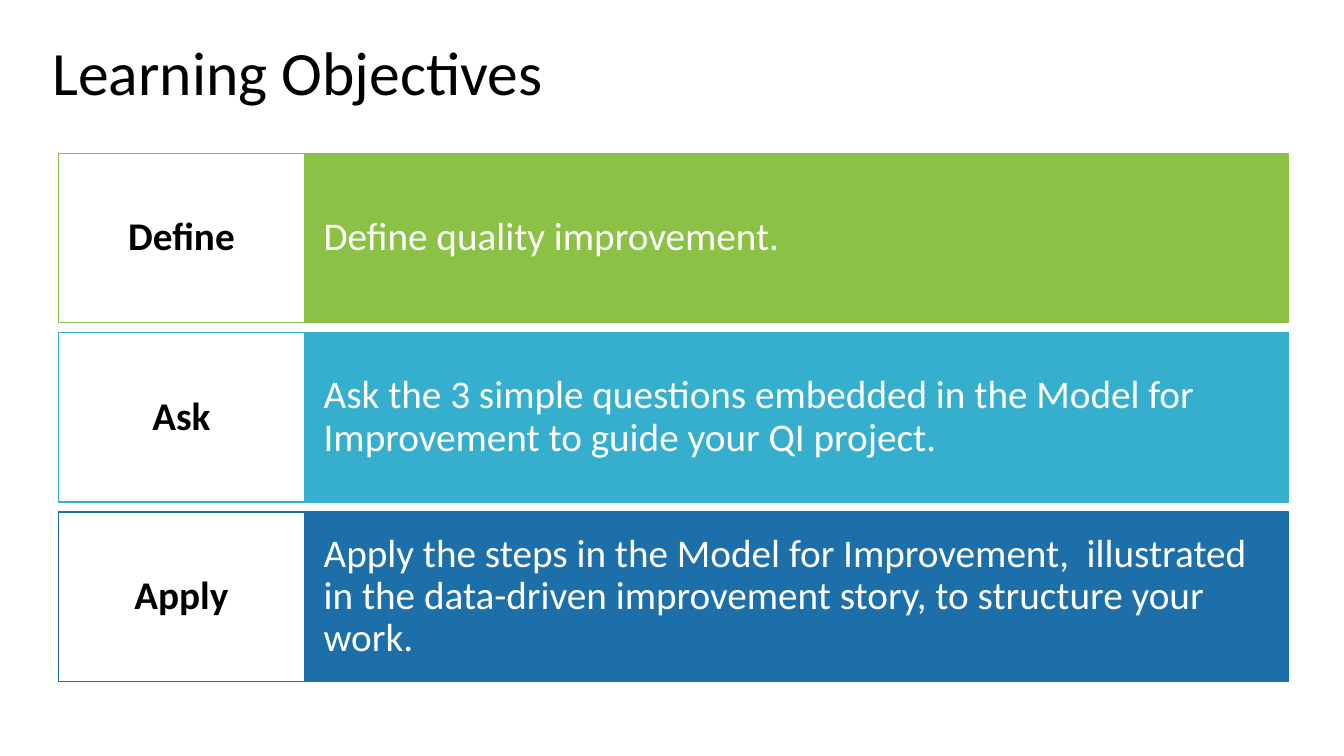
from pptx import Presentation
from pptx.dml.color import RGBColor
from pptx.enum.shapes import MSO_SHAPE
from pptx.enum.text import MSO_ANCHOR, MSO_AUTO_SIZE, PP_ALIGN
from pptx.util import Inches, Pt

RECTANGLE = MSO_SHAPE.RECTANGLE
MIDDLE = MSO_ANCHOR.MIDDLE
NO_AUTOFIT = MSO_AUTO_SIZE.NONE
LEFT, CENTER = PP_ALIGN.LEFT, PP_ALIGN.CENTER

FONT = "Calibri"
BLACK, WHITE = "000000", "FFFFFF"

# Grid of objectives, in inches
GRID_LEFT, GRID_TOP, GRID_WIDTH = 0.58, 1.52, 12.2
LABEL_WIDTH = GRID_WIDTH / 5
ROW_HEIGHT, ROW_PITCH = 1.68, 1.78

OBJECTIVES = [
    ("Define", "Define quality improvement.", "8BC145"),
    ("Ask", "Ask the 3 simple questions embedded in the Model for "
     "Improvement to guide your QI project.", "36AFCE"),
    ("Apply", "Apply the steps in the Model for Improvement,  illustrated in "
     "the data-driven improvement story, to structure your work.", "1D6FA9"),
]


def color(hex_string):
    return RGBColor.from_string(hex_string)


def write_text(shape, text, size, hex_color, bold=False, align=LEFT):
    frame = shape.text_frame
    frame.word_wrap = True
    frame.auto_size = NO_AUTOFIT
    frame.vertical_anchor = MIDDLE
    paragraph = frame.paragraphs[0]
    paragraph.alignment = align
    paragraph.line_spacing = 0.9
    paragraph.space_before = Pt(0)
    run = paragraph.add_run()
    run.text = text
    run.font.name = FONT
    run.font.size = Pt(size)
    run.font.bold = bold
    run.font.color.rgb = color(hex_color)


def place_title(slide, text):
    title = slide.shapes.title
    title.left, title.top = Inches(0.42), Inches(0.02)
    title.width, title.height = Inches(8.62), Inches(1.45)
    write_text(title, text, 44, BLACK)


def add_cell(slide, left, top, width, fill, line, margins):
    cell = slide.shapes.add_shape(RECTANGLE, Inches(left), Inches(top),
                                  Inches(width), Inches(ROW_HEIGHT))
    cell.shadow.inherit = False
    cell.fill.solid()
    cell.fill.fore_color.rgb = color(fill)
    cell.line.color.rgb = color(line)
    cell.line.width = Pt(1)
    frame = cell.text_frame
    horizontal, vertical = margins
    frame.margin_left = frame.margin_right = Inches(horizontal)
    frame.margin_top = frame.margin_bottom = Inches(vertical)
    return cell


def add_objective(slide, row, label, description, accent):
    top = GRID_TOP + row * ROW_PITCH
    description_cell = add_cell(slide, GRID_LEFT + LABEL_WIDTH, top,
                                GRID_WIDTH - LABEL_WIDTH, accent, accent,
                                (0.19, 0.43))
    write_text(description_cell, description, 28, WHITE)
    label_cell = add_cell(slide, GRID_LEFT, top, LABEL_WIDTH, WHITE, accent,
                          (0.13, 0.17))
    write_text(label_cell, label, 28, BLACK, bold=True, align=CENTER)


def main():
    presentation = Presentation()
    presentation.slide_width = Inches(13.33)
    presentation.slide_height = Inches(7.5)
    title_only = presentation.slide_layouts.get_by_name("Title Only")
    slide = presentation.slides.add_slide(title_only)

    # Heading
    place_title(slide, "Learning Objectives")

    # One row per objective
    for row, (label, description, accent) in enumerate(OBJECTIVES):
        add_objective(slide, row, label, description, accent)

    presentation.save("out.pptx")


if __name__ == "__main__":
    main()
